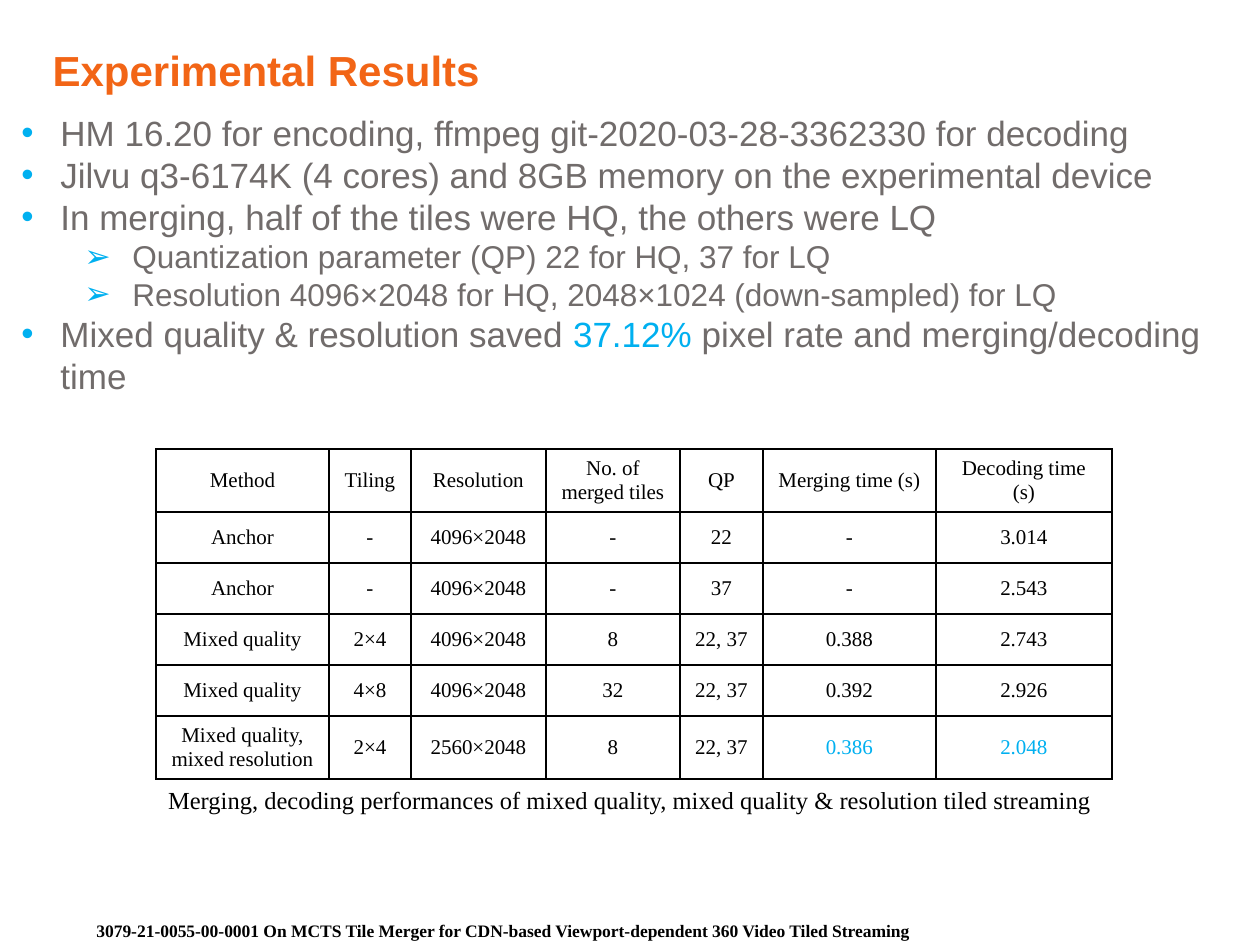
from lxml import etree
from pptx import Presentation
from pptx.dml.color import RGBColor
from pptx.enum.text import MSO_ANCHOR, MSO_AUTO_SIZE, PP_ALIGN
from pptx.oxml.ns import qn
from pptx.util import Pt

LEFT, CENTER = PP_ALIGN.LEFT, PP_ALIGN.CENTER
MIDDLE = MSO_ANCHOR.MIDDLE
GROW = MSO_AUTO_SIZE.SHAPE_TO_FIT_TEXT
ORANGE = RGBColor(0xF2, 0x65, 0x16)
GRAY = RGBColor(0x71, 0x6C, 0x6B)
BLUE = RGBColor(0x00, 0xB0, 0xF0)
BLACK = RGBColor(0, 0, 0)
SANS, SERIF = "Arial", "Times New Roman"
PX = 914400 / 126


def px(n):
    return round(n * PX)


def add_run(p, text, name, size, color, bold=False):
    r = p.add_run()
    r.text = text
    values = {"name": name, "size": Pt(size), "bold": bold}
    for key, value in values.items():
        setattr(r.font, key, value)
    r.font.color.rgb = color


prs = Presentation()
prs.slide_width, prs.slide_height = px(1260), px(945)
s = prs.slides.add_slide(prs.slide_layouts[5])

# Title
title = s.shapes.title
title.left, title.top, title.width, title.height = px(40), px(38), px(1167), px(78)
tf = title.text_frame
tf.vertical_anchor = MIDDLE
tf.margin_bottom = px(14)
p = tf.paragraphs[0]
p.alignment, p.line_spacing = LEFT, 0.9
add_run(p, "Experimental Results", SANS, 24, ORANGE, True)

# Bullets: level and text runs
bullets = [
    (0, [("HM 16.20 for encoding, ffmpeg git-2020-03-28-3362330 for decoding", GRAY)]),
    (0, [("Jilvu q3-6174K (4 cores) and 8GB memory on the experimental device", GRAY)]),
    (0, [("In merging, half of the tiles were HQ, the others were LQ", GRAY)]),
    (1, [("Quantization parameter (QP) 22 for HQ, 37 for LQ", GRAY)]),
    (1, [("Resolution 4096×2048 for HQ, 2048×1024 (down-sampled) for LQ", GRAY)]),
    (0, [("Mixed quality & resolution saved ", GRAY), ("37.12%", BLUE),
         (" pixel rate and merging/decoding time", GRAY)]),
]
# Level format: bullet, left margin, hanging indent, text size
levels = [("•", 39, 39, 20), ("➢", 111, 48, 18)]

tf = s.shapes.add_textbox(px(9), px(105), px(1251), px(301)).text_frame
tf.word_wrap = True
tf.auto_size = GROW
for i, (level, runs) in enumerate(bullets):
    char, margin, hang, size = levels[level]
    p = tf.paragraphs[0] if i == 0 else tf.add_paragraph()
    p.level = level
    pPr = p._p.get_or_add_pPr()
    pPr.set("marL", str(px(margin)))
    pPr.set("indent", str(px(-hang)))
    bu_color = etree.SubElement(pPr, qn("a:buClr"))
    etree.SubElement(bu_color, qn("a:srgbClr"), val=str(BLUE))
    etree.SubElement(pPr, qn("a:buFont"), typeface=SANS)
    etree.SubElement(pPr, qn("a:buChar"), char=char)
    for text, color in runs:
        add_run(p, text, SANS, size, color)

# Results table
rows = [
    ["Method", "Tiling", "Resolution", "No. of\nmerged tiles", "QP",
     "Merging time (s)", "Decoding time (s)"],
    ["Anchor", "-", "4096×2048", "-", "22", "-", "3.014"],
    ["Anchor", "-", "4096×2048", "-", "37", "-", "2.543"],
    ["Mixed quality", "2×4", "4096×2048", "8", "22, 37", "0.388", "2.743"],
    ["Mixed quality", "4×8", "4096×2048", "32", "22, 37", "0.392", "2.926"],
    ["Mixed quality,\nmixed resolution", "2×4", "2560×2048", "8", "22, 37",
     "0.386", "2.048"],
]
col_widths = [173, 82, 135, 134, 83, 173, 176]
row_heights = [63, 51, 51, 51, 51, 63]
best = {"0.386", "2.048"}

table = s.shapes.add_table(len(rows), len(col_widths), px(156), px(449),
                           px(sum(col_widths)), px(sum(row_heights))).table
table.first_row = table.horz_banding = False
for col, width in zip(table.columns, col_widths):
    col.width = px(width)
for row, height, texts in zip(table.rows, row_heights, rows):
    row.height = px(height)
    for cell, text in zip(row.cells, texts):
        cell.vertical_anchor = MIDDLE
        tf = cell.text_frame
        for i, line in enumerate(text.split("\n")):
            p = tf.paragraphs[0] if i == 0 else tf.add_paragraph()
            p.alignment = CENTER
            add_run(p, line, SERIF, 12, BLUE if text in best else BLACK)
        tcPr = cell._tc.get_or_add_tcPr()
        for side in ("a:lnL", "a:lnR", "a:lnT", "a:lnB"):
            ln = etree.SubElement(tcPr, qn(side), w=str(Pt(1)))
            fill = etree.SubElement(ln, qn("a:solidFill"))
            etree.SubElement(fill, qn("a:srgbClr"), val=str(BLACK))
        cell.fill.background()

# Table caption
tf = s.shapes.add_textbox(px(152), px(779), px(956), px(43)).text_frame
tf.word_wrap = False
tf.auto_size = GROW
p = tf.paragraphs[0]
p.alignment = CENTER
add_run(p, "Merging, decoding performances of mixed quality, "
        "mixed quality & resolution tiled streaming", SERIF, 14, BLACK)

# Footer
tf = s.shapes.add_textbox(px(84), px(914), px(1003), px(31)).text_frame
tf.word_wrap = True
add_run(tf.paragraphs[0], "3079-21-0055-00-0001 On MCTS Tile Merger for CDN-based "
        "Viewport-dependent 360 Video Tiled Streaming", SERIF, 10, BLACK, True)

prs.save("out.pptx")
